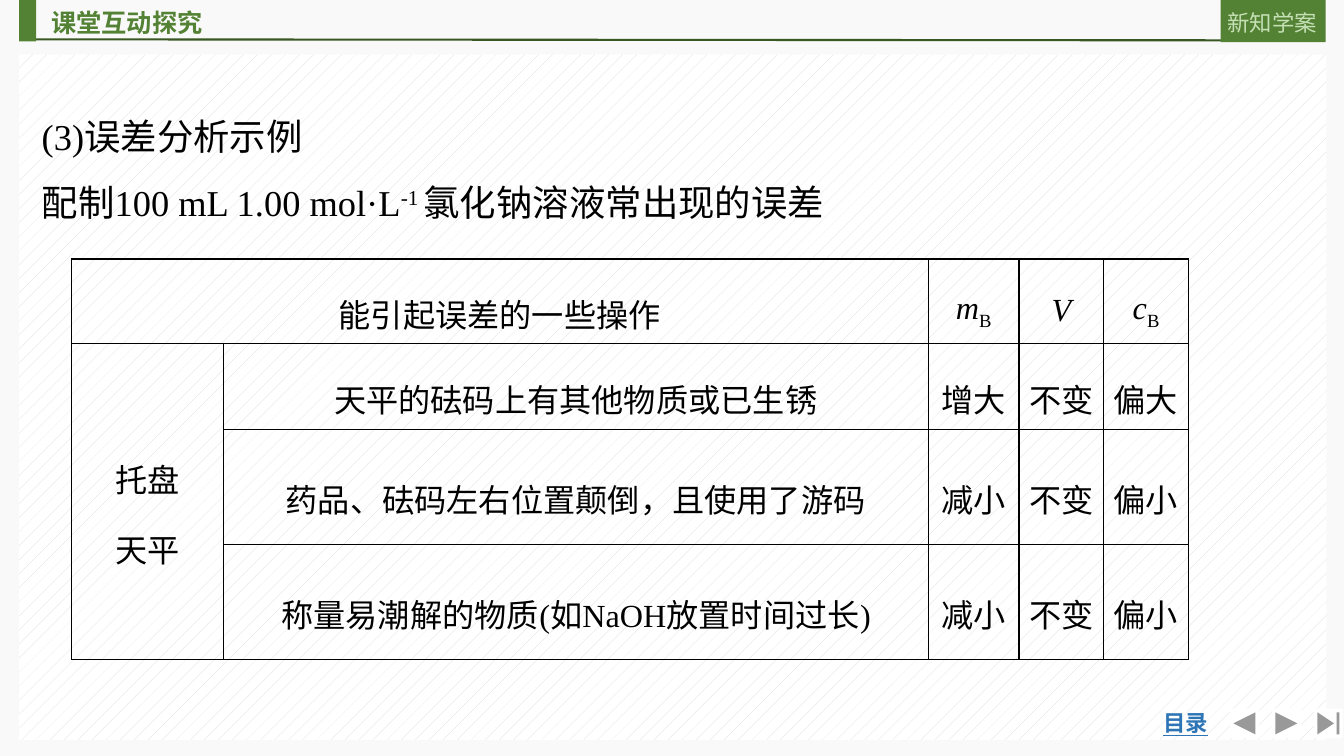
from lxml import etree
from pptx import Presentation
from pptx.dml.color import RGBColor
from pptx.enum.dml import MSO_PATTERN
from pptx.enum.shapes import MSO_CONNECTOR, MSO_SHAPE
from pptx.enum.text import MSO_ANCHOR, PP_ALIGN
from pptx.oxml.ns import qn
from pptx.util import Pt

RECTANGLE = MSO_SHAPE.RECTANGLE
BACK = MSO_SHAPE.ACTION_BUTTON_BACK_OR_PREVIOUS
FORWARD = MSO_SHAPE.ACTION_BUTTON_FORWARD_OR_NEXT
END = MSO_SHAPE.ACTION_BUTTON_END
STRAIGHT = MSO_CONNECTOR.STRAIGHT
DOTS = MSO_PATTERN.PERCENT_5
MIDDLE = MSO_ANCHOR.MIDDLE
LEFT, CENTER, JUSTIFY = PP_ALIGN.LEFT, PP_ALIGN.CENTER, PP_ALIGN.JUSTIFY

THEME = {
    "sans": "Noto Sans CJK SC", "serif": "Times New Roman",
    "page": RGBColor.from_string("F9F9F9"), "white": RGBColor.from_string("FFFFFF"),
    "dots": RGBColor.from_string("D9D9D9"), "green": RGBColor.from_string("548235"),
    "rule": RGBColor.from_string("385723"), "pale": RGBColor.from_string("C5E0B4"),
    "blue": RGBColor.from_string("2E75B6"), "black": RGBColor.from_string("000000"),
    "heading": Pt(18), "label": Pt(16), "body": Pt(26), "table": Pt(23),
}


def add_block(kind, left, top, width, height, color):
    block = page.shapes.add_shape(kind, Pt(left), Pt(top), Pt(width), Pt(height))
    block.shadow.inherit = False
    block.line.fill.background()
    block.fill.solid()
    block.fill.fore_color.rgb = THEME[color]
    return block


def write(frame, lines, font, size, color, align, spacing=1.0):
    for index, spans in enumerate(lines):
        para = frame.paragraphs[0] if index == 0 else frame.add_paragraph()
        para.alignment = align
        para.line_spacing = spacing
        para.font.name = THEME[font]
        para.font.size = THEME[size]
        para.font.color.rgb = THEME[color]
        if font == "sans":
            defaults = para._p.pPr.find(qn("a:defRPr"))
            etree.SubElement(defaults, qn("a:ea"), typeface=THEME[font])
        for text, style in spans:
            span = para.add_run()
            span.text = text
            if style == "italic":
                span.font.italic = True
            elif style:
                span._r.get_or_add_rPr().set("baseline", style)


deck = Presentation()
deck.slide_width, deck.slide_height = Pt(960), Pt(540)
page = deck.slides.add_slide(deck.slide_layouts[6])
page.background.fill.solid()
page.background.fill.fore_color.rgb = THEME["page"]

panel = add_block(RECTANGLE, 13.7, 38.9, 933.8, 489.6, "white")
panel.fill.patterned()
panel.fill.pattern = DOTS
panel.fill.fore_color.rgb = THEME["dots"]
panel.fill.back_color.rgb = THEME["white"]

rule = page.shapes.add_connector(STRAIGHT, Pt(15.1), Pt(28.1), Pt(877), Pt(28.8))
rule.line.color.rgb = THEME["rule"]
rule.line.width = Pt(1.5)
etree.SubElement(rule._element.spPr, qn("a:effectLst"))

add_block(RECTANGLE, 13.7, 0, 12.2, 29.5, "green")
add_block(RECTANGLE, 872, 0, 75, 30.2, "green")
for index, kind in enumerate((BACK, FORWARD, END)):
    add_block(kind, 878.4 + 30 * index, 506.2, 21, 21, "white")

LABELS = [
    ("课堂互动探究", 29.5, 1.4, 420, 29, "heading", "green", True, False),
    ("新知学案", 869.8, 2.9, 85, 26.6, "label", "pale", False, False),
    ("目录", 823.7, 503.3, 46.8, 26.6, "label", "blue", True, True),
]
for text, left, top, width, height, size, color, bold, underline in LABELS:
    box = page.shapes.add_textbox(Pt(left), Pt(top), Pt(width), Pt(height))
    box.text_frame.word_wrap = not underline
    write(box.text_frame, [[(text, None)]], "sans", size, color, LEFT)
    font = box.text_frame.paragraphs[0].font
    font.bold, font.underline = bold, underline

intro = page.shapes.add_textbox(Pt(20.2), Pt(61.2), Pt(918), Pt(98.6)).text_frame
intro.word_wrap = True
intro.margin_left = intro.margin_right = Pt(9.6)
intro.margin_top = intro.margin_bottom = Pt(4.8)
INTRO = [
    [("(3)误差分析示例", None)],
    [("配制100 mL 1.00 mol·L", None), ("-1 ", "30000"), ("氯化钠溶液常出现的误差", None)],
]
write(intro, INTRO, "serif", "body", "black", JUSTIFY, 1.5)

COLUMNS = [108.7, 503.3, 64.8, 60.5, 60.5]
ROWS = [60.5, 61.2, 82.1, 82.1]
CONTENT = {
    (0, 0): [[("能引起误差的一些操作", None)]],
    (0, 2): [[("m", "italic"), ("B", "-25000")]],
    (0, 3): [[("V", "italic")]],
    (0, 4): [[("c", "italic"), ("B", "-25000")]],
    (1, 0): [[("托盘", None)], [("天平", None)]],
}
ERRORS = [
    ("天平的砝码上有其他物质或已生锈", "增大", "不变", "偏大"),
    ("药品、砝码左右位置颠倒，且使用了游码", "减小", "不变", "偏小"),
    ("称量易潮解的物质(如NaOH放置时间过长)", "减小", "不变", "偏小"),
]
for row, texts in enumerate(ERRORS, 1):
    for column, text in enumerate(texts, 1):
        CONTENT[row, column] = [[(text, None)]]

table = page.shapes.add_table(
    len(ROWS), len(COLUMNS), Pt(51.1), Pt(185), Pt(sum(COLUMNS)), Pt(sum(ROWS))
).table
table.first_row = table.horz_banding = False
for column, width in zip(table.columns, COLUMNS):
    column.width = Pt(width)
for row, height in zip(table.rows, ROWS):
    row.height = Pt(height)
table.cell(0, 0).merge(table.cell(0, 1))
table.cell(1, 0).merge(table.cell(3, 0))

for row in range(len(ROWS)):
    for column in range(len(COLUMNS)):
        cell = table.cell(row, column)
        cell.vertical_anchor = MIDDLE
        cell.margin_left = cell.margin_right = Pt(2.9)
        cell.margin_top = cell.margin_bottom = 0
        properties = cell._tc.get_or_add_tcPr()
        for side in ("a:lnL", "a:lnR", "a:lnT", "a:lnB"):
            border = etree.SubElement(properties, qn(side), w=str(Pt(1)))
            paint = etree.SubElement(border, qn("a:solidFill"))
            etree.SubElement(paint, qn("a:srgbClr"), val=str(THEME["black"]))
        cell.fill.background()
        if (row, column) in CONTENT:
            write(cell.text_frame, CONTENT[row, column], "serif", "table", "black", CENTER, 1.5)

deck.save("out.pptx")
